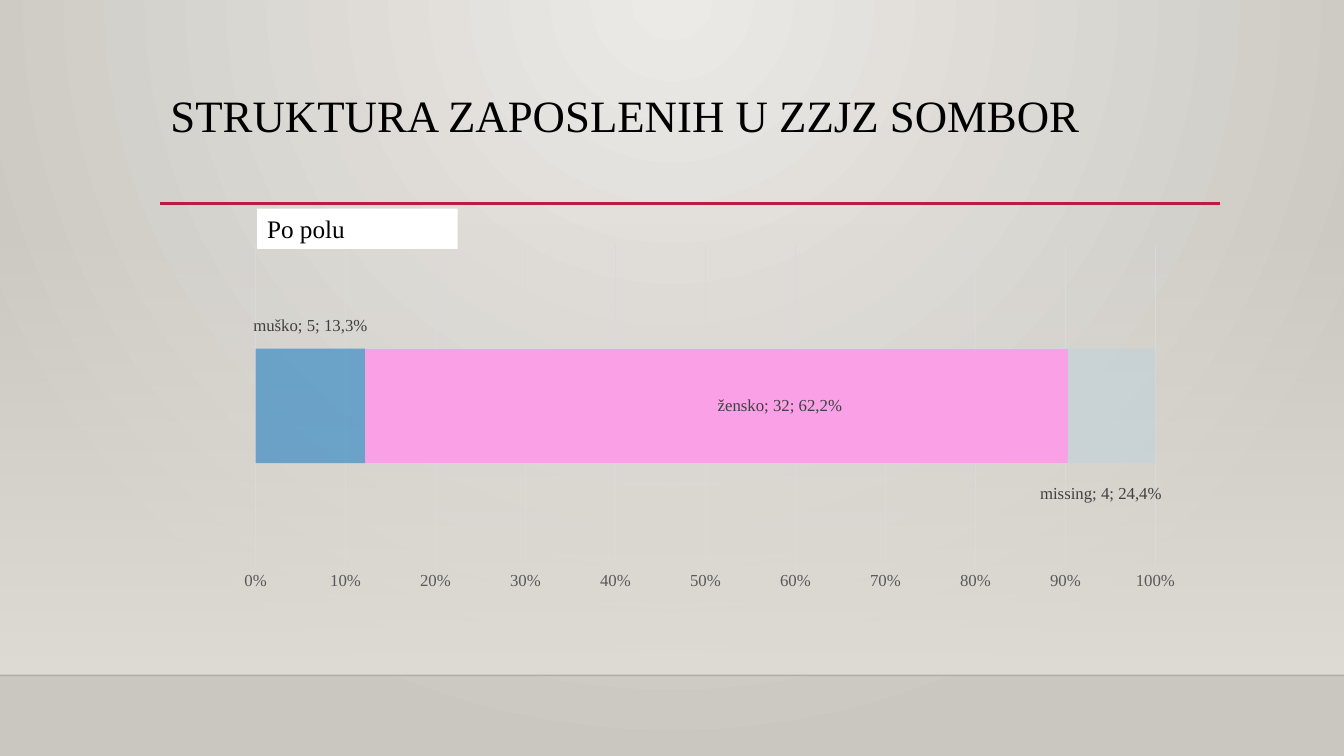
from dataclasses import dataclass

from lxml.etree import SubElement
from pptx import Presentation
from pptx.chart.data import CategoryChartData
from pptx.chart.series import BarSeries
from pptx.dml.color import RGBColor
from pptx.enum.chart import (XL_CHART_TYPE, XL_LABEL_POSITION,
                             XL_TICK_LABEL_POSITION, XL_TICK_MARK)
from pptx.enum.shapes import MSO_CONNECTOR, MSO_SHAPE
from pptx.enum.text import MSO_ANCHOR, PP_ALIGN
from pptx.oxml.ns import qn
from pptx.shapes.autoshape import Shape
from pptx.slide import Slide
from pptx.text.text import Font, TextFrame
from pptx.util import Inches, Pt

WIDTH, HEIGHT = Inches(13.33), Inches(7.5)


@dataclass(frozen=True)
class Theme:
    font: str = "Times New Roman"
    head: int = 32
    tag: int = 18
    note: int = 12
    base: int = 10
    black: str = "000000"
    white: str = "FFFFFF"
    rule: str = "B71E42"
    edge: str = "000001"
    tick: str = "595959"
    label: str = "404040"
    grid: str = "D9D9D9"
    light: str = "ECEAE7"
    dark: str = "CAC7C1"
    wall: str = "DFDBD5"


@dataclass(frozen=True)
class Box:
    """Place and size in percent of the slide."""
    left: float
    top: float
    width: float
    height: float

    def span(self) -> tuple[int, int, int, int]:
        return (round(WIDTH * self.left / 100), round(HEIGHT * self.top / 100),
                round(WIDTH * self.width / 100), round(HEIGHT * self.height / 100))


@dataclass(frozen=True)
class Group:
    """One bar part; the shifts move its label, as shares of the chart."""
    name: str
    count: int
    share: str
    color: str
    alpha: int
    right: float
    down: float


@dataclass(frozen=True)
class Rule:
    box: Box
    color: str
    width: float
    alpha: int


THEME = Theme()
TITLE = Box(11.93, 11.73, 78.77, 15.33)
CHART = Box(11.93, 29.33, 78.77, 50.27)
WALL = Box(0, 29.47, 100, 59.87)
TAG = Box(19.13, 27.6, 14.93, 5.33)
RULES = [
    Rule(Box(0, 89.33, 100, 0), THEME.edge, 1, 20),
    Rule(Box(11.93, 26.93, 78.84, 0), THEME.rule, 2.5, 100),
]
GROUPS = [
    Group("muško", 5, "13,3%", "0070C0", 50, 0, -0.21),
    Group("žensko", 32, "62,2%", "FAA0E7", 100, 0.06, 0),
    Group("missing", 4, "24,4%", "C3D3D9", 67, -0.01, 0.23),
]


def style(font: Font, size: int, color: str) -> None:
    font.name = THEME.font
    font.size = Pt(size)
    font.color.rgb = RGBColor.from_string(color)


def write(frame: TextFrame, text: str, size: int, color: str) -> None:
    part = frame.paragraphs[0]
    run = part.add_run()
    run.text = text
    style(run.font, size, color)


def fade(root, alpha: int) -> None:
    """Make the colours below root see-through."""
    if alpha < 100:
        for tint in root.iter(qn("a:srgbClr")):
            SubElement(tint, qn("a:alpha"), val=str(alpha * 1000))


def blend(root, stops: list[tuple[str, int]]):
    """Refill the gradient below root from (colour, alpha) ends."""
    grad = next(root.iter(qn("a:gradFill")))
    for child in list(grad):
        grad.remove(child)
    group = SubElement(grad, qn("a:gsLst"))
    for place, (color, alpha) in zip((0, 100000), stops):
        stop = SubElement(group, qn("a:gs"), pos=str(place))
        SubElement(stop, qn("a:srgbClr"), val=color)
        fade(stop, alpha)
    return grad


def block(slide: Slide, box: Box) -> Shape:
    shape = slide.shapes.add_shape(MSO_SHAPE.RECTANGLE, *box.span())
    shape.shadow.inherit = False
    shape.line.fill.background()
    return shape


def paint(slide: Slide) -> None:
    """Draw the backdrop and the wall in front of it."""
    slide.background.fill.gradient()
    grad = blend(slide._element, [(THEME.light, 100), (THEME.dark, 100)])
    ring = SubElement(grad, qn("a:path"), {"path": "circle"})
    SubElement(ring, qn("a:fillToRect"), l="43000", t="0", r="43000", b="100000")
    wall = block(slide, WALL)
    wall.fill.gradient()
    grad = blend(wall._element, [(THEME.wall, 0), (THEME.wall, 100)])
    SubElement(grad, qn("a:lin"), ang="5400000", scaled="0")


def draw(slide: Slide, rule: Rule) -> None:
    left, top, width, height = rule.box.span()
    line = slide.shapes.add_connector(MSO_CONNECTOR.STRAIGHT, left, top,
                                      left + width, top + height)
    line.line.color.rgb = RGBColor.from_string(rule.color)
    line.line.width = Pt(rule.width)
    props = line._element.spPr
    fade(props, rule.alpha)
    SubElement(props, qn("a:effectLst"))


def layout(node, **parts: object) -> None:
    """Fill a c:layout node with a manual layout."""
    hand = SubElement(node, qn("c:manualLayout"))
    for name, value in parts.items():
        SubElement(hand, qn(f"c:{name}"), val=str(value))


def mark(bar: BarSeries, group: Group) -> None:
    """Colour a bar part and place its label."""
    bar.format.fill.solid()
    bar.format.fill.fore_color.rgb = RGBColor.from_string(group.color)
    fade(bar._element.spPr, group.alpha)
    labels = bar.data_labels
    labels.show_value = labels.show_series_name = True
    style(labels.font, THEME.note, THEME.label)
    label = bar.points[0].data_label
    label.text_frame.word_wrap = False
    write(label.text_frame, f"{group.name}; {group.count}; {group.share}",
          THEME.note, THEME.label)
    label.position = XL_LABEL_POSITION.CENTER
    node = next(bar._element.iter(qn("c:dLbl")))
    node.find(qn("c:showSerName")).set("val", "1")
    place = SubElement(node, qn("c:layout"))
    node.insert(1, place)
    layout(place, x=group.right, y=group.down)
    for lead in bar._element.iter(qn("c:showLeaderLines")):
        lead.set("val", "0")


def plot(slide: Slide) -> None:
    data = CategoryChartData()
    data.categories = ["1"]
    for group in GROUPS:
        data.add_series(group.name, [group.count])
    chart = slide.shapes.add_chart(XL_CHART_TYPE.BAR_STACKED_100,
                                   *CHART.span(), data).chart
    chart.has_legend = chart.has_title = False
    style(chart.font, THEME.base, THEME.black)
    bars = chart.plots[0]
    bars.gap_width, bars.overlap, bars.vary_by_categories = 182, 100, False
    for bar, group in zip(bars.series, GROUPS):
        mark(bar, group)
    chart.category_axis.visible = False
    axis = chart.value_axis
    axis.major_tick_mark = axis.minor_tick_mark = XL_TICK_MARK.NONE
    axis.tick_label_position = XL_TICK_LABEL_POSITION.NEXT_TO_AXIS
    axis.tick_labels.number_format = "0%"
    axis.tick_labels.number_format_is_linked = False
    style(axis.tick_labels.font, THEME.note, THEME.tick)
    axis.format.line.fill.background()
    axis.has_major_gridlines = True
    grid = axis.major_gridlines.format.line
    grid.color.rgb = RGBColor.from_string(THEME.grid)
    grid.width = Pt(0.75)
    area = next(chart._chartSpace.iter(qn("c:plotArea")))
    place = area.find(qn("c:layout"))
    if place is None:
        place = SubElement(area, qn("c:layout"))
        area.insert(0, place)
    layout(place, layoutTarget="inner", xMode="edge", yMode="edge",
           x=0.09, y=0.06, w=0.85, h=0.85)


def main() -> None:
    deck = Presentation()
    deck.slide_width, deck.slide_height = WIDTH, HEIGHT
    slide = deck.slides.add_slide(deck.slide_layouts[5])
    paint(slide)
    for rule in RULES:
        draw(slide, rule)
    title = slide.shapes.title
    title.left, title.top, title.width, title.height = TITLE.span()
    plot(slide)
    tag = block(slide, TAG)
    tag.fill.solid()
    tag.fill.fore_color.rgb = RGBColor.from_string(THEME.white)
    write(title.text_frame, "STRUKTURA ZAPOSLENIH U ZZJZ SOMBOR", THEME.head, THEME.black)
    write(tag.text_frame, "Po polu", THEME.tag, THEME.black)
    title.text_frame.paragraphs[0].line_spacing = 0.9
    for shape in (title, tag):
        shape.text_frame.word_wrap = True
        shape.text_frame.vertical_anchor = MSO_ANCHOR.TOP
        shape.text_frame.paragraphs[0].alignment = PP_ALIGN.LEFT
    deck.save("out.pptx")


if __name__ == "__main__":
    main()
